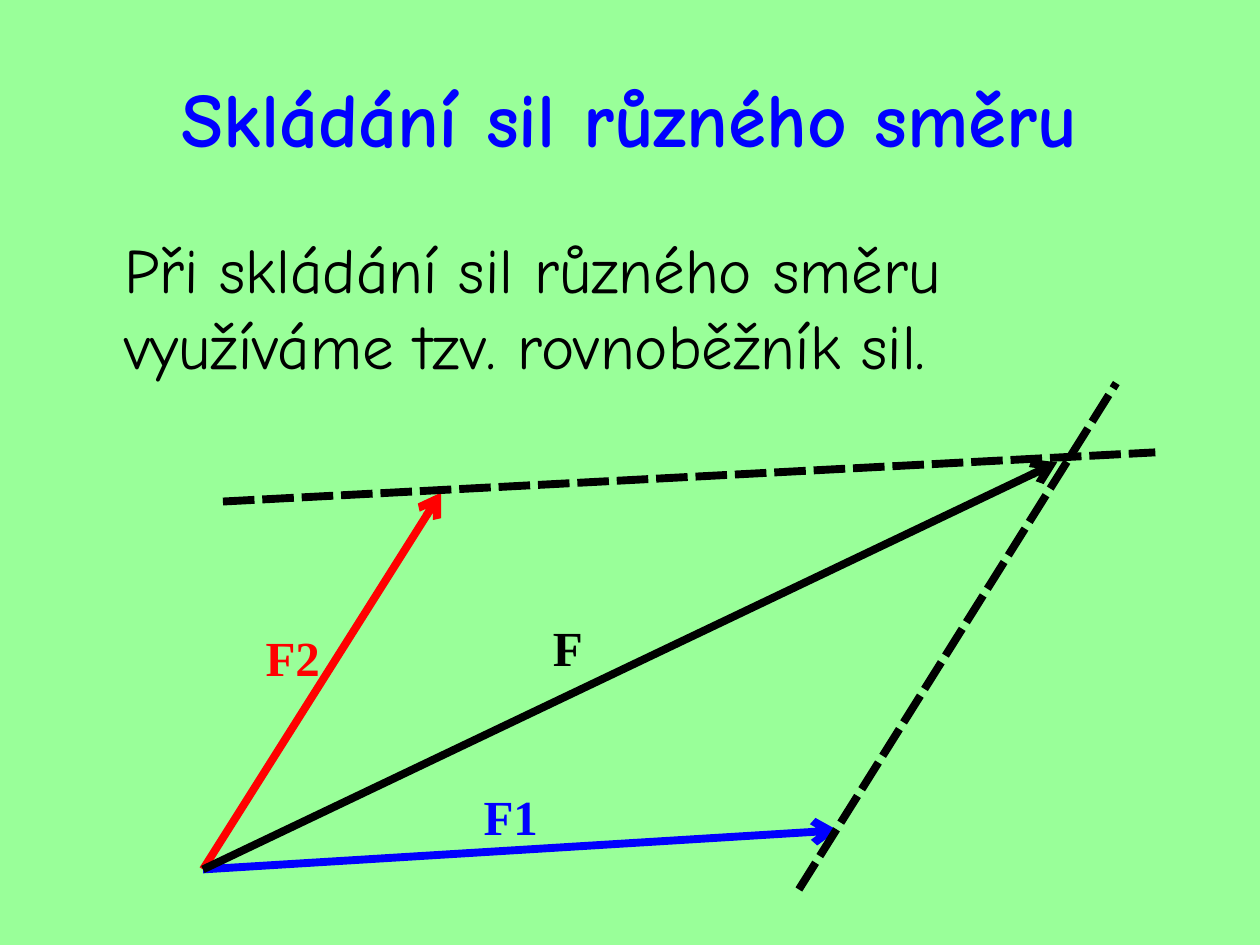
from lxml.etree import SubElement
from pptx import Presentation
from pptx.dml.color import RGBColor
from pptx.enum.shapes import MSO_CONNECTOR
from pptx.enum.text import MSO_ANCHOR, MSO_AUTO_SIZE, PP_ALIGN
from pptx.oxml.ns import qn
from pptx.util import Pt

GREEN = RGBColor(0x99, 0xFF, 0x99)
BLUE = RGBColor(0x00, 0x00, 0xFF)
RED = RGBColor(0xFF, 0x00, 0x00)
BLACK = RGBColor(0x00, 0x00, 0x00)


class ForceSlide:
    heading_font = "Comic Neue"
    label_font = "Times New Roman"
    line_width = 4.5

    def __init__(self, deck):
        self.page = deck.slides.add_slide(deck.slide_layouts[1])
        self.page.background.fill.solid()
        self.page.background.fill.fore_color.rgb = GREEN

    def style(self, para, name, size, color, bold=False):
        font = para.font
        font.name, font.size, font.bold = name, Pt(size), bold
        font.color.rgb = color

    def place(self, box, left, top, width, height):
        box.left, box.top = Pt(left), Pt(top)
        box.width, box.height = Pt(width), Pt(height)

    def title(self, text, *area):
        box = self.page.shapes.title
        self.place(box, *area)
        box.text_frame.text = text
        box.text_frame.vertical_anchor = MSO_ANCHOR.MIDDLE
        para = box.text_frame.paragraphs[0]
        para.alignment = PP_ALIGN.CENTER
        self.style(para, self.heading_font, 44, BLUE, bold=True)

    def body(self, text, *area):
        box = self.page.placeholders[1]
        self.place(box, *area)
        box.text_frame.text = text
        box.text_frame.vertical_anchor = MSO_ANCHOR.TOP
        para = box.text_frame.paragraphs[0]
        # Plain indented text without a bullet
        properties = para._p.get_or_add_pPr()
        properties.set("marL", str(Pt(27)))
        properties.set("indent", "0")
        SubElement(properties, qn("a:buNone"))
        para.space_before = Pt(9)
        self.style(para, self.heading_font, 36, BLACK)

    def line(self, start, end, color):
        connector = self.page.shapes.add_connector(
            MSO_CONNECTOR.STRAIGHT, *map(Pt, start + end))
        connector.line.width = Pt(self.line_width)
        connector.line.color.rgb = color
        SubElement(connector._element.spPr, qn("a:effectLst"))
        return connector.line._get_or_add_ln()

    def force(self, start, end, color):
        SubElement(self.line(start, end, color), qn("a:tailEnd"), type="arrow")

    def guide(self, start, end):
        dashes = SubElement(self.line(start, end, BLACK), qn("a:custDash"))
        SubElement(dashes, qn("a:ds"), d="400000", sp="100000")

    def label(self, text, left, top, width, color):
        box = self.page.shapes.add_textbox(Pt(left), Pt(top), Pt(width), Pt(41))
        frame = box.text_frame
        frame.text = text
        frame.word_wrap = False
        frame.auto_size = MSO_AUTO_SIZE.SHAPE_TO_FIT_TEXT
        self.style(frame.paragraphs[0], self.label_font, 28, color, bold=True)


def main():
    deck = Presentation()
    deck.slide_width, deck.slide_height = Pt(720), Pt(540)
    slide = ForceSlide(deck)

    # Heading and explanation
    slide.title("Skládání sil různého směru", 36, 21.6, 648, 90)
    slide.body("Při skládání sil různého směru využíváme tzv. rovnoběžník sil.",
               36.7, 128.2, 648, 110)

    # Component forces from the common origin
    origin = (116, 496.8)
    slide.force(origin, (478.8, 474.5), BLUE)
    slide.label("F1", 269.3, 445.7, 48.2, BLUE)
    slide.force(origin, (252, 281.5), RED)
    slide.label("F2", 144.7, 355, 48.2, RED)

    # Parallels that complete the parallelogram
    slide.guide((127.4, 286.6), (660.2, 258.5))
    slide.guide((456.5, 508.3), (637.9, 218.9))

    # Resultant force
    slide.force(origin, (604.1, 264.2), BLACK)
    slide.label("F", 308.9, 349.2, 31, BLACK)

    deck.save("out.pptx")


if __name__ == "__main__":
    main()
